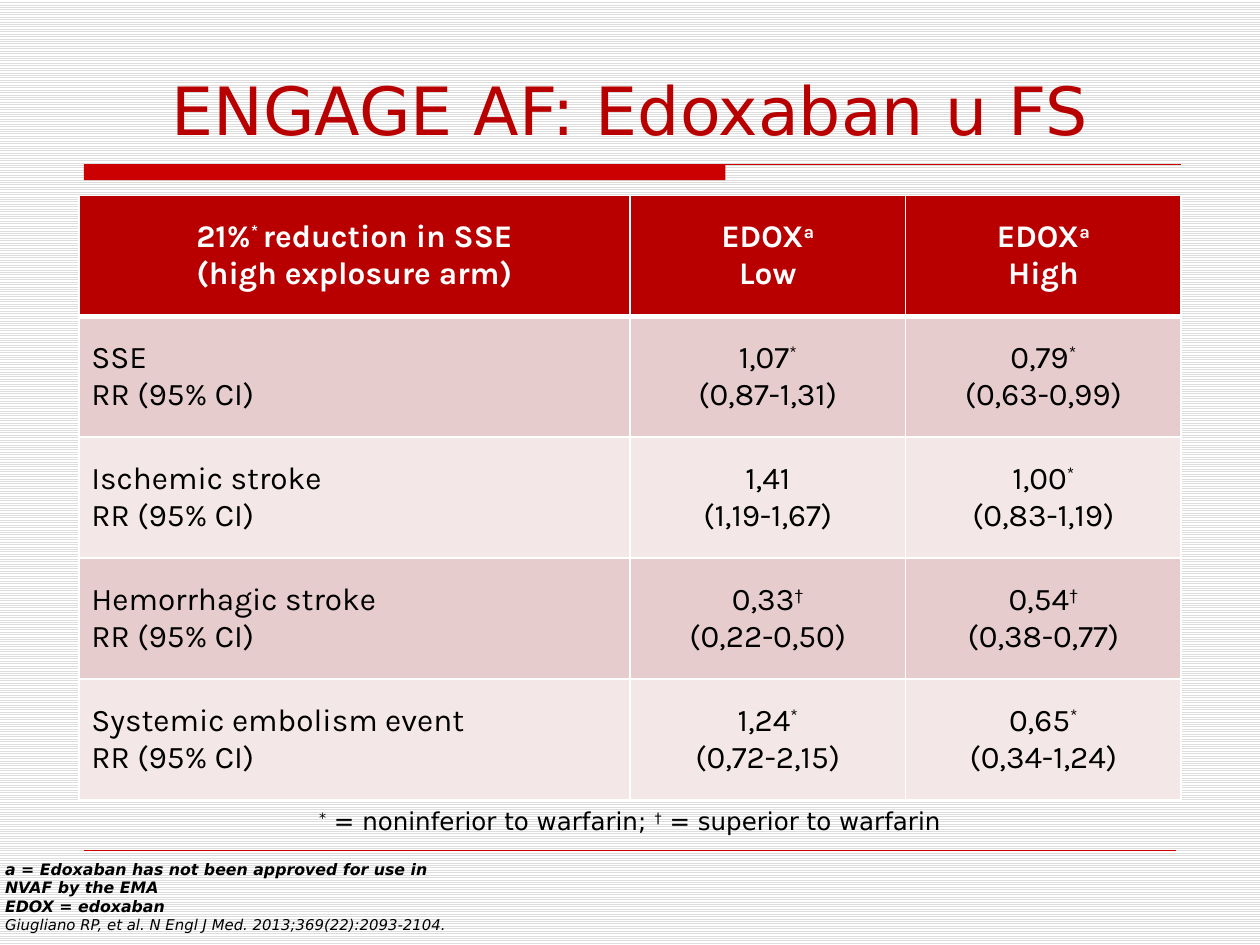
from lxml.etree import SubElement
from pptx import Presentation
from pptx.dml.color import RGBColor
from pptx.enum.dml import MSO_PATTERN as Pattern
from pptx.enum.shapes import MSO_CONNECTOR as Connector, MSO_SHAPE as Shape
from pptx.enum.text import MSO_ANCHOR as Anchor, MSO_AUTO_SIZE as AutoSize, PP_ALIGN as Align
from pptx.oxml import parse_xml
from pptx.oxml.ns import nsdecls, qn
from pptx.util import Pt

RED, DARK_RED, WHITE, BLACK = "CC0000", "B90000", "FFFFFF", "000000"
BANDS = ("E6CCCC", "F3E7E7")
SANS = {"name": "DejaVu Sans", "size": Pt(14), "color": BLACK}
TITLE = {**SANS, "size": Pt(38), "color": DARK_RED}
NOTE = {**SANS, "size": Pt(9), "bold": True, "italic": True}
SOURCE = {**NOTE, "size": Pt(8.5), "bold": False}
BODY = {"name": "Karla", "size": Pt(18), "color": BLACK, "bold": False}
HEADER = {**BODY, "color": WHITE, "bold": True}

COLUMN_WIDTHS = (315, 157.5, 157.5)
ROW_HEIGHT = 69.12
ROWS = (
    ("21%^* ^reduction in SSE\n(high explosure arm)", "EDOX^a\nLow", "EDOX^a\nHigh"),
    ("SSE\nRR (95% CI)", "1,07^*\n(0,87-1,31)", "0,79^*\n(0,63-0,99)"),
    ("Ischemic stroke\nRR (95% CI)", "1,41\n(1,19-1,67)", "1,00^*\n(0,83-1,19)"),
    ("Hemorrhagic stroke\nRR (95% CI)", "0,33^†\n(0,22-0,50)", "0,54^†\n(0,38-0,77)"),
    ("Systemic embolism event\nRR (95% CI)", "1,24^*\n(0,72-2,15)", "0,65^*\n(0,34-1,24)"),
)


def color(value):
    """Return the colour for a hex string."""
    return RGBColor.from_string(value)


def set_format(target, values):
    """Set every attribute named in a dict of format values."""
    for name, value in values.items():
        if name == "color":
            target.color.rgb = color(value)
        else:
            setattr(target, name, value)


def write_line(para, text, font, align):
    """Fill a paragraph, raising the parts between carets to superscript."""
    para.alignment = align
    for index, part in enumerate(text.split("^")):
        if part:
            span = para.add_run()
            span.text = part
            set_format(span.font, font)
            if index % 2:
                span._r.get_or_add_rPr().set("baseline", "30000")


def write_lines(frame, lines, align):
    """Write pairs of text and font as the paragraphs of a frame."""
    for index, (text, font) in enumerate(lines):
        para = frame.add_paragraph() if index else frame.paragraphs[0]
        write_line(para, text, font, align)


def paint_background(page):
    """Give the page its fine horizontal stripes."""
    fill = page.background.fill
    fill.patterned()
    fill.pattern = Pattern.LIGHT_HORIZONTAL
    fill.fore_color.rgb = color("DDDDDD")
    fill.back_color.rgb = color(WHITE)


def add_rule(page, left, right, top, width):
    """Add a thin red horizontal line."""
    rule = page.shapes.add_connector(Connector.STRAIGHT, Pt(left), Pt(top), Pt(right), Pt(top))
    set_format(rule.line, {"color": RED, "width": Pt(width)})
    SubElement(rule._element.spPr, qn("a:effectLst"))


def add_bar(page, left, top, width, height):
    """Add the solid red bar under the title."""
    bar = page.shapes.add_shape(Shape.RECTANGLE, Pt(left), Pt(top), Pt(width), Pt(height))
    bar.shadow.inherit = False
    bar.fill.solid()
    bar.fill.fore_color.rgb = color(RED)
    bar.line.fill.background()


def set_title(page, text):
    """Place and format the title placeholder."""
    title = page.shapes.title
    set_format(title, {"left": Pt(45), "top": Pt(24), "width": Pt(630), "height": Pt(64.8)})
    set_format(title.text_frame, {"vertical_anchor": Anchor.BOTTOM, "auto_size": AutoSize.NONE})
    write_lines(title.text_frame, [(text, TITLE)], Align.CENTER)


def add_text(page, place, lines, align, **frame_format):
    """Add a wrapping text box."""
    box = page.shapes.add_textbox(*map(Pt, place))
    set_format(box.text_frame, {"word_wrap": True, **frame_format})
    write_lines(box.text_frame, lines, align)


def set_borders(cell, top, bottom):
    """Draw white borders of the given widths around a cell."""
    properties = cell._tc.get_or_add_tcPr()
    for index, (side, width) in enumerate((("L", 1), ("R", 1), ("T", top), ("B", bottom))):
        properties.insert(index, parse_xml(
            f'<a:ln{side} {nsdecls("a")} w="{Pt(width)}"><a:solidFill>'
            f'<a:srgbClr val="{WHITE}"/></a:solidFill></a:ln{side}>'))


def add_results(page, left, top):
    """Add the table of relative risks."""
    size = sum(COLUMN_WIDTHS), ROW_HEIGHT * len(ROWS)
    table = page.shapes.add_table(
        len(ROWS), len(COLUMN_WIDTHS), *map(Pt, (left, top, *size))).table
    for column, width in zip(table.columns, COLUMN_WIDTHS):
        column.width = Pt(width)
    for row, texts in enumerate(ROWS):
        table.rows[row].height = Pt(ROW_HEIGHT)
        font = BODY if row else HEADER
        for column, text in enumerate(texts):
            cell = table.cell(row, column)
            cell.vertical_anchor = Anchor.MIDDLE
            cell.fill.solid()
            cell.fill.fore_color.rgb = color(BANDS[(row - 1) % 2] if row else DARK_RED)
            set_borders(cell, 3 if row == 1 else 1, 1 if row else 3)
            align = Align.LEFT if row and not column else Align.CENTER
            write_lines(cell.text_frame, [(line, font) for line in text.split("\n")], align)


def main():
    """Build the slide and save it."""
    deck = Presentation()
    deck.slide_width, deck.slide_height = Pt(720), Pt(540)
    page = deck.slides.add_slide(deck.slide_layouts[5])
    paint_background(page)
    add_bar(page, 48, 94, 366.5, 9)
    add_rule(page, 48, 674.75, 94, 0.75)
    add_rule(page, 48, 672, 486, 0.25)
    set_title(page, "ENGAGE AF: Edoxaban u FS")
    notes = [
        ("a = Edoxaban has not been approved for use in NVAF by the EMA", NOTE),
        ("EDOX = edoxaban", NOTE),
        ("Giugliano RP, et al. N Engl J Med. 2013;369(22):2093-2104.", SOURCE),
    ]
    add_text(page, (0, 491, 275, 39.6), notes, Align.LEFT, margin_left=Pt(2.88),
             margin_right=Pt(2.88), margin_top=0, margin_bottom=0)
    add_results(page, 45, 111.6)
    legend = "^*^ = noninferior to warfarin; ^†^ = superior to warfarin"
    add_text(page, (0, 457.2, 720, 24.5), [(legend, SANS)], Align.CENTER,
             auto_size=AutoSize.SHAPE_TO_FIT_TEXT)
    deck.save("out.pptx")


if __name__ == "__main__":
    main()
